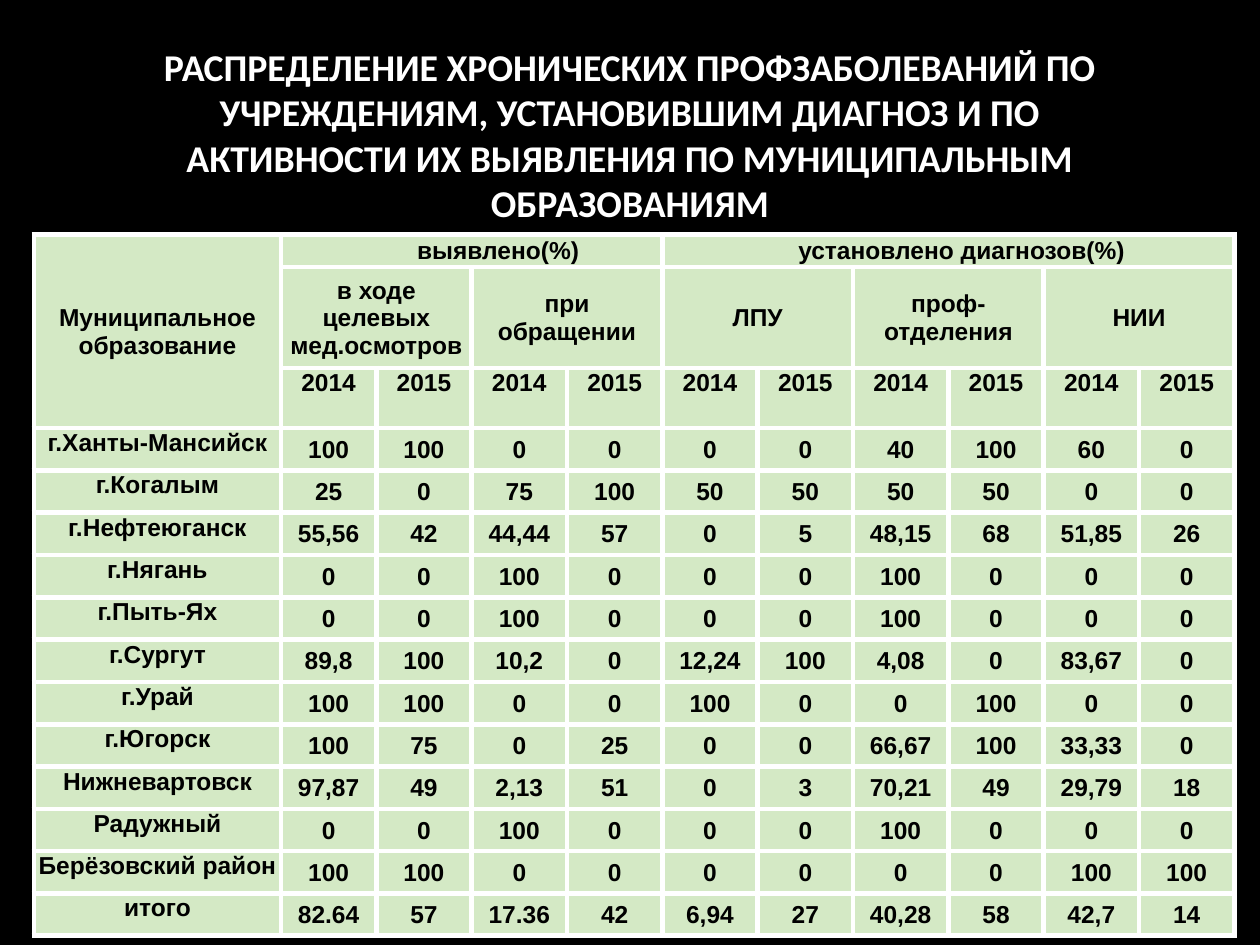
import pptx
import pptx.util
import pptx.dml.color
import pptx.enum.text
import pptx.oxml.ns
import lxml.etree
from dataclasses import dataclass

# Content
TITLE = ("РАСПРЕДЕЛЕНИЕ ХРОНИЧЕСКИХ ПРОФЗАБОЛЕВАНИЙ ПО УЧРЕЖДЕНИЯМ, "
         "УСТАНОВИВШИМ ДИАГНОЗ И ПО АКТИВНОСТИ ИХ ВЫЯВЛЕНИЯ "
         "ПО МУНИЦИПАЛЬНЫМ ОБРАЗОВАНИЯМ")
REGION_HEADING = "Муниципальное образование"
# heading, extra left indent in inches, subheadings
GROUPS = [
    ("выявлено(%)", 0.43, ["в ходе целевых мед.осмотров", "при обращении"]),
    ("установлено диагнозов(%)", 0.22, ["ЛПУ", "проф-отделения", "НИИ"]),
]
YEARS = ["2014", "2015"]
REGIONS = [
    ("г.Ханты-Мансийск", "100 100 0 0 0 0 40 100 60 0"),
    ("г.Когалым", "25 0 75 100 50 50 50 50 0 0"),
    ("г.Нефтеюганск", "55,56 42 44,44 57 0 5 48,15 68 51,85 26"),
    ("г.Нягань", "0 0 100 0 0 0 100 0 0 0"),
    ("г.Пыть-Ях", "0 0 100 0 0 0 100 0 0 0"),
    ("г.Сургут", "89,8 100 10,2 0 12,24 100 4,08 0 83,67 0"),
    ("г.Урай", "100 100 0 0 100 0 0 100 0 0"),
    ("г.Югорск", "100 75 0 25 0 0 66,67 100 33,33 0"),
    ("Нижневартовск", "97,87 49 2,13 51 0 3 70,21 49 29,79 18"),
    ("Радужный", "0 0 100 0 0 0 100 0 0 0"),
    ("Берёзовский район", "100 100 0 0 0 0 0 0 100 100"),
    ("итого", "82.64 57 17.36 42 6,94 27 40,28 58 42,7 14"),
]


@dataclass(frozen=True)
class Theme:
    background: str = "000000"
    title_color: str = "FFFFFF"
    cell_fill: str = "D4E9C5"
    cell_text: str = "000000"
    border: str = "FFFFFF"
    border_pt: float = 3
    title_font: str = "Calibri"
    title_pt: float = 21.6
    table_font: str = "Arial"
    table_pt: float = 14


THEME = Theme()
INCH = pptx.util.Inches
MIDDLE = pptx.enum.text.MSO_ANCHOR.MIDDLE
TOP = pptx.enum.text.MSO_ANCHOR.TOP
qn = pptx.oxml.ns.qn

# Grid, in inches
TABLE_LEFT, TABLE_TOP = 0.27, 1.86
REGION_WIDTH, VALUE_WIDTH = 1.96, 0.757
HEADER_HEIGHTS = [0.26, 0.8, 0.45]
REGION_HEIGHT = 0.336
CELL_INSET = 0.01


def rgb(value):
    return pptx.dml.color.RGBColor.from_string(value)


def style_paragraph(paragraph, font_name, size, color):
    paragraph.alignment = pptx.enum.text.PP_ALIGN.CENTER
    font = paragraph.font
    font.name, font.size, font.bold = font_name, pptx.util.Pt(size), True
    font.color.rgb = rgb(color)


def style_cell(cell):
    cell.margin_left = cell.margin_right = cell.margin_top = INCH(CELL_INSET)
    cell.margin_bottom = 0
    properties = cell._tc.get_or_add_tcPr()
    for side in ("a:lnL", "a:lnR", "a:lnT", "a:lnB"):
        line = lxml.etree.SubElement(properties, qn(side),
                                     w=str(pptx.util.Pt(THEME.border_pt)))
        fill = lxml.etree.SubElement(line, qn("a:solidFill"))
        lxml.etree.SubElement(fill, qn("a:srgbClr"), val=THEME.border)
    cell.fill.solid()
    cell.fill.fore_color.rgb = rgb(THEME.cell_fill)
    paragraph = cell.text_frame.paragraphs[0]
    style_paragraph(paragraph, THEME.table_font, THEME.table_pt, THEME.cell_text)
    # Cells hidden by a merge must not make their row taller
    if not cell.text:
        lxml.etree.SubElement(paragraph._p, qn("a:endParaRPr"),
                              sz=str(THEME.table_pt * 100))


def put(table, row, column, text, anchor=MIDDLE, rows=1, columns=1):
    cell = table.cell(row, column)
    cell.text = text
    cell.vertical_anchor = anchor
    if rows * columns > 1:
        cell.merge(table.cell(row + rows - 1, column + columns - 1))
    return cell


def add_title(slide):
    box = slide.shapes.add_textbox(INCH(0.75), INCH(0.27), INCH(8.5), INCH(1.59))
    frame = box.text_frame
    frame.word_wrap = True
    frame.vertical_anchor = MIDDLE
    frame.text = TITLE
    style_paragraph(frame.paragraphs[0], THEME.title_font, THEME.title_pt,
                    THEME.title_color)


def add_disease_table(slide):
    widths = [REGION_WIDTH] + [VALUE_WIDTH] * len(REGIONS[0][1].split())
    heights = HEADER_HEIGHTS + [REGION_HEIGHT] * len(REGIONS)
    table = slide.shapes.add_table(
        len(heights), len(widths), INCH(TABLE_LEFT), INCH(TABLE_TOP),
        INCH(sum(widths)), INCH(sum(heights))).table
    table.first_row = table.horz_banding = False
    for column, width in zip(table.columns, widths):
        column.width = INCH(width)
    for row, height in zip(table.rows, heights):
        row.height = INCH(height)

    # Header levels: group, subgroup, year
    indented = []
    put(table, 0, 0, REGION_HEADING, rows=len(HEADER_HEIGHTS))
    column = 1
    for heading, indent, subheadings in GROUPS:
        group = put(table, 0, column, heading,
                    columns=len(subheadings) * len(YEARS))
        indented.append((group, indent))
        for subheading in subheadings:
            put(table, 1, column, subheading, columns=len(YEARS))
            for year in YEARS:
                put(table, 2, column, year, TOP)
                column += 1

    # Region rows
    for row, (region, values) in enumerate(REGIONS, len(HEADER_HEIGHTS)):
        put(table, row, 0, region, TOP)
        for column, value in enumerate(values.split(), 1):
            put(table, row, column, value)

    for cell in table.iter_cells():
        style_cell(cell)
    for group, indent in indented:
        group.margin_left = INCH(indent)


def main():
    deck = pptx.Presentation()
    deck.slide_width, deck.slide_height = INCH(10), INCH(7.5)
    slide = deck.slides.add_slide(deck.slide_layouts[6])
    slide.background.fill.solid()
    slide.background.fill.fore_color.rgb = rgb(THEME.background)
    add_title(slide)
    add_disease_table(slide)
    deck.save("out.pptx")


if __name__ == "__main__":
    main()
